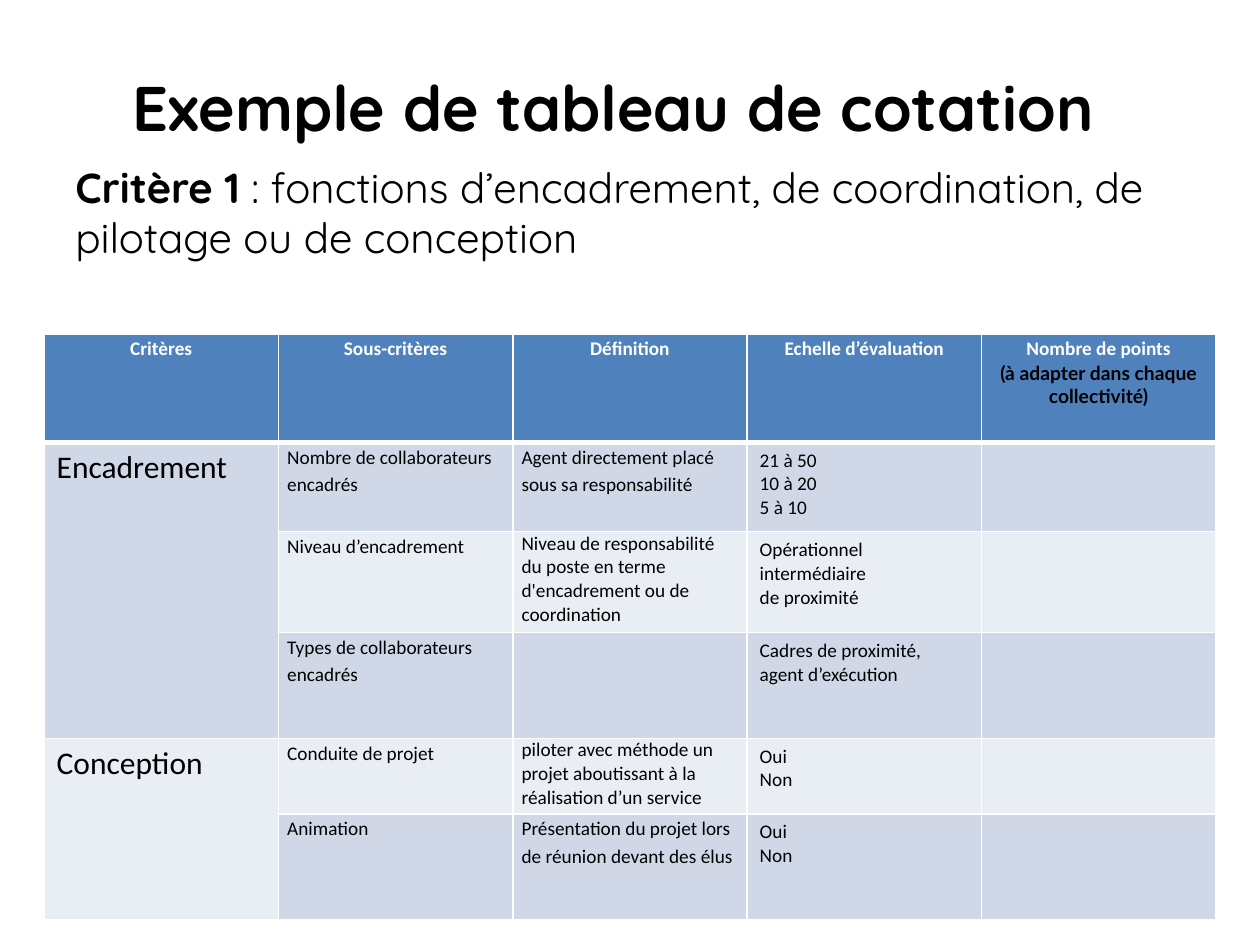
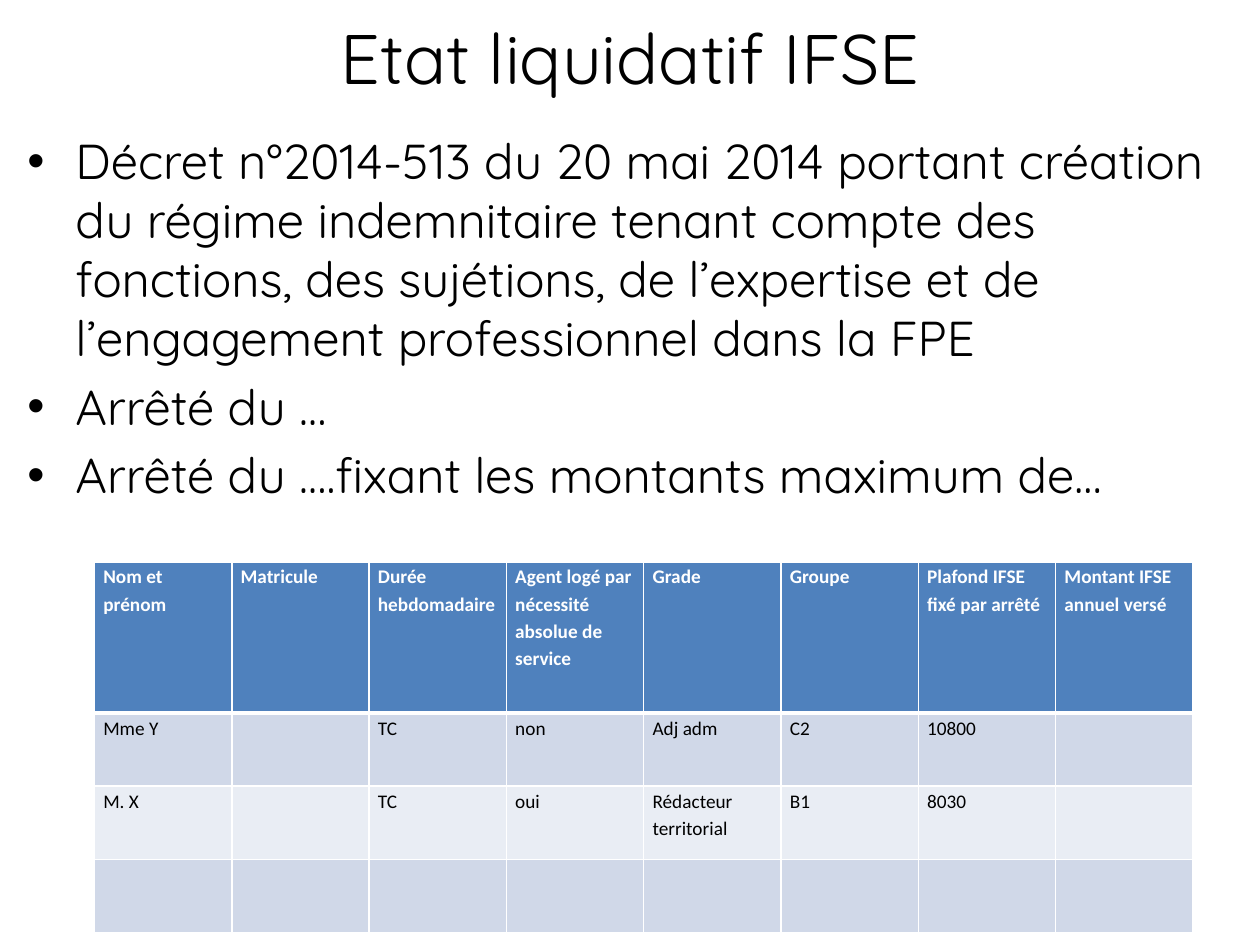
from dataclasses import dataclass, field
from typing import Any

from lxml.etree import SubElement
from pptx import Presentation
from pptx.dml.color import RGBColor
from pptx.enum.text import MSO_ANCHOR as Anchor, PP_ALIGN as Align
from pptx.oxml.ns import qn
from pptx.util import Inches, Pt

# Shared look
BLACK, WHITE, HEADER = "000000", "FFFFFF", "4F81BD"
BANDS = ("D0D8E8", "E9EDF4")
TITLE_FONT, TABLE_FONT, NOTE_FONT = "Quicksand", "Calibri", "Lato"
BULLET_INDENT = 0.38
TIGHT = dict(margin_left=Inches(0.07), margin_right=Inches(0.07),
             margin_top=0, margin_bottom=0)


@dataclass
class Run:
    text: str
    size: float = 11
    font: str = TABLE_FONT
    color: str = BLACK
    bold: bool = False


@dataclass
class Para:
    runs: list[Run]
    fmt: dict[str, Any] = field(default_factory=dict)
    bullet: bool = False


@dataclass
class Cell:
    paras: list[Para]
    tight: bool = True


@dataclass
class Grid:
    left: float
    top: float
    col_width: float
    row_heights: list[float]
    rows: list[list[Cell | None]]
    merges: list[tuple[int, int]] = field(default_factory=list)


def rgb(value: str) -> RGBColor:
    return RGBColor.from_string(value)


def apply(target: Any, values: dict[str, Any]) -> None:
    for name, value in values.items():
        setattr(target, name, value)


def write(tf: Any, paras: list[Para]) -> None:
    """Fill a text frame with formatted paragraphs."""
    for i, para in enumerate(paras):
        p = tf.paragraphs[0] if i == 0 else tf.add_paragraph()
        apply(p, para.fmt)
        if para.bullet:
            pPr = p._p.get_or_add_pPr()
            pPr.set("marL", str(Inches(BULLET_INDENT)))
            pPr.set("indent", str(-Inches(BULLET_INDENT)))
            SubElement(pPr, qn("a:buFont"), typeface="Arial")
            SubElement(pPr, qn("a:buChar"), char="•")
        for run in para.runs:
            r = p.add_run()
            r.text = run.text
            apply(r.font, dict(size=Pt(run.size), name=run.font, bold=run.bold))
            r.font.color.rgb = rgb(run.color)


def add_text(s: Any, box: tuple[float, ...], paras: list[Para], **frame: Any) -> None:
    tf = s.shapes.add_textbox(*map(Inches, box)).text_frame
    apply(tf, dict(word_wrap=True) | frame)
    write(tf, paras)


def add_title(s: Any, box: tuple[float, ...], run: Run, **frame: Any) -> None:
    add_text(s, box, [Para([run], dict(alignment=Align.CENTER))],
             vertical_anchor=Anchor.MIDDLE, **frame)


def set_borders(cell: Any, top: float, bottom: float) -> None:
    tcPr = cell._tc.get_or_add_tcPr()
    for side, width in dict(L=1, R=1, T=top, B=bottom).items():
        ln = SubElement(tcPr, qn(f"a:ln{side}"), w=str(Pt(width)))
        fill = SubElement(ln, qn("a:solidFill"))
        SubElement(fill, qn("a:srgbClr"), val=WHITE)


def add_grid(s: Any, grid: Grid) -> None:
    """Draw a table with a header row and alternating bands."""
    n_rows, n_cols = len(grid.rows), len(grid.rows[0])
    size = (grid.col_width * n_cols, sum(grid.row_heights))
    table = s.shapes.add_table(n_rows, n_cols, *map(
        Inches, (grid.left, grid.top, *size))).table
    for col in table.columns:
        col.width = Inches(grid.col_width)
    for i, (row, height) in enumerate(zip(grid.rows, grid.row_heights)):
        table.rows[i].height = Inches(height)
        for j, content in enumerate(row):
            cell = table.cell(i, j)
            set_borders(cell, 3 if i == 1 else 1, 3 if i == 0 else 1)
            cell.fill.solid()
            cell.fill.fore_color.rgb = rgb(BANDS[(i - 1) % 2] if i else HEADER)
            if content:
                if content.tight:
                    apply(cell, TIGHT)
                write(cell.text_frame, content.paras)
    for first, last in grid.merges:
        table.cell(first, 0).merge(table.cell(last, 0))


# Kinds of cell
def head(text: str, align: Any = Align.LEFT) -> Cell:
    return Cell([Para([Run(text, color=WHITE, bold=True)],
                      dict(line_spacing=1.15, alignment=align))])


def body(text: str) -> Cell | None:
    return Cell([Para([Run(text)], dict(line_spacing=1.15))]) if text else None


def lines(*texts: str, tight: bool = False, size: float = 11) -> Cell:
    return Cell([Para([Run(t, size)]) for t in texts], tight)


def build_scoring(prs: Any) -> None:
    s = prs.slides.add_slide(prs.slide_layouts[6])
    add_title(s, (0.5, 0.3, 9, 1.09),
              Run("Exemple de tableau de cotation", 36, TITLE_FONT, bold=True),
              margin_right=Inches(0.37))
    add_text(s, (0.5, 1.23, 9, 1.2), [Para([
        Run("Critère 1", 24, TITLE_FONT, bold=True),
        Run("\u00a0: fonctions d’encadrement, de coordination, de pilotage "
            "ou de conception", 24, TITLE_FONT),
    ], dict(space_before=Pt(4.8)))])

    # Scoring table
    headers = [head(t, Align.CENTER) for t in (
        "Critères", "Sous-critères", "Définition", "Echelle d’évaluation",
        "Nombre de points")]
    headers[-1].paras.append(Para(
        [Run("(à adapter dans chaque collectivité)", font=NOTE_FONT, bold=True)],
        dict(alignment=Align.CENTER)))
    rows = [
        headers,
        [lines("Encadrement", size=18), body("Nombre de collaborateurs encadrés"),
         body("Agent directement placé sous sa responsabilité"),
         lines("21 à 50", "10 à 20", "5 à 10"), None],
        [None, body("Niveau d’encadrement"),
         lines("Niveau de responsabilité du poste en terme d'encadrement ou de",
               "coordination", tight=True),
         lines("Opérationnel", "intermédiaire", "de proximité"), None],
        [None, body("Types de collaborateurs encadrés"), None,
         lines("Cadres de proximité, agent d’exécution"), None],
        [lines("Conception", size=18), body("Conduite de projet"),
         lines("piloter avec méthode un projet aboutissant à la",
               "réalisation d’un service", tight=True),
         lines("Oui", "Non"), None],
        [None, body("Animation"),
         body("Présentation du projet lors de réunion devant des élus"),
         lines("Oui", "Non"), None],
    ]
    add_grid(s, Grid(0.35, 2.65, 1.86, [0.86, 0.71, 0.8, 0.84, 0.6, 0.84],
                     rows, merges=[(1, 3), (4, 5)]))


def build_statement(prs: Any) -> None:
    s = prs.slides.add_slide(prs.slide_layouts[6])
    add_title(s, (0.5, 0.05, 9, 0.79), Run("Etat liquidatif IFSE", 40, TITLE_FONT))
    references = (
        "Décret n°2014-513 du 20 mai 2014 portant création du régime indemnitaire "
        "tenant compte des fonctions, des sujétions, de l’expertise et de "
        "l’engagement professionnel dans la FPE",
        "Arrêté du …",
        "Arrêté du ….fixant les montants maximum de…",
    )
    add_text(s, (0.12, 0.99, 9.76, 3.3), [
        Para([Run(t, 28, TITLE_FONT)], dict(space_before=Pt(5.6)), bullet=True)
        for t in references])

    # Payment table
    headers = ("Nom et prénom", "Matricule", "Durée hebdomadaire",
               "Agent logé par nécessité absolue de service", "Grade", "Groupe",
               "Plafond IFSE fixé par arrêté", "Montant IFSE annuel versé")
    agents = (
        ("Mme Y", "", "TC", "non", "Adj adm", "C2", "10800", ""),
        ("M. X", "", "TC", "oui", "Rédacteur territorial", "B1", "8030", ""),
        ("",) * len(headers),
    )
    rows = [[head(t) for t in headers]]
    rows += [[body(t) for t in agent] for agent in agents]
    add_grid(s, Grid(0.75, 4.46, 1.09, [1.2] + [0.58] * len(agents), rows))


def main() -> None:
    prs = Presentation()
    prs.slide_width, prs.slide_height = Inches(10), Inches(7.5)
    build_scoring(prs)
    build_statement(prs)
    prs.save("out.pptx")


if __name__ == "__main__":
    main()
